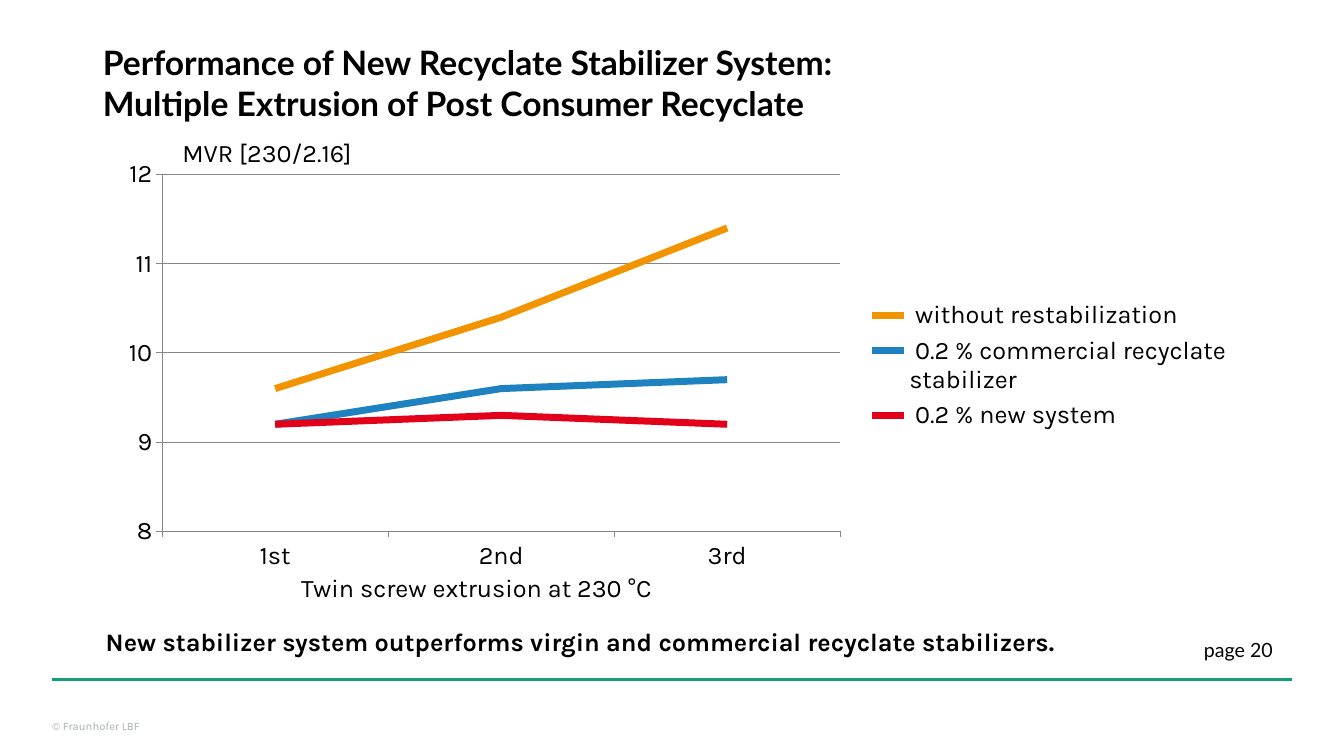
from dataclasses import dataclass

from lxml import etree
from pptx import Presentation
from pptx.chart.data import CategoryChartData
from pptx.dml.color import RGBColor
from pptx.enum.chart import XL_CHART_TYPE, XL_LEGEND_POSITION, XL_TICK_MARK
from pptx.enum.shapes import MSO_CONNECTOR
from pptx.enum.text import MSO_ANCHOR, MSO_AUTO_SIZE, PP_ALIGN
from pptx.oxml.ns import qn
from pptx.util import Inches, Pt

LINE_CHART = XL_CHART_TYPE.LINE
LEGEND_RIGHT = XL_LEGEND_POSITION.RIGHT
TICK_OUTSIDE, TICK_NONE = XL_TICK_MARK.OUTSIDE, XL_TICK_MARK.NONE
STRAIGHT = MSO_CONNECTOR.STRAIGHT
TOP, BOTTOM = MSO_ANCHOR.TOP, MSO_ANCHOR.BOTTOM
LEFT = PP_ALIGN.LEFT
NO_AUTOFIT = MSO_AUTO_SIZE.NONE

WIDTH, HEIGHT = Inches(13.33), Inches(7.5)
TITLE_ONLY = 5
COLOURS = {
    "text": "000000",
    "copyright": "A8AFAF",
    "rule": "179C7D",
    "grid": "868686",
    "orange": "F29400",
    "blue": "1F82C0",
    "red": "E2001A",
}


@dataclass(frozen=True)
class Area:
    """A rectangle in percent of the slide's width and height."""
    left: float
    top: float
    width: float
    height: float

    def lengths(self) -> tuple[int, int, int, int]:
        return (across(self.left), down(self.top),
                across(self.width), down(self.height))


@dataclass(frozen=True)
class Label:
    text: str
    area: Area
    size: float = 18
    font: str = "Karla"
    colour: str = "text"
    bold: bool = False
    inset: bool = True
    anchor: MSO_ANCHOR = TOP


@dataclass(frozen=True)
class Stabilizer:
    name: str
    colour: str
    melt_rates: tuple[float, ...]


TITLE = Label("Performance of New Recyclate Stabilizer System:\n"
              "Multiple Extrusion of Post Consumer Recyclate",
              Area(6.9, 4.93, 60.17, 12.13), size=24, font="Lato", bold=True)
LABELS = (
    Label("© Fraunhofer LBF", Area(3.9, 95.2, 14.8, 1.9),
          size=8, colour="copyright", inset=False),
    Label("page 20", Area(89.57, 84.27, 6.08, 3.2),
          size=14, font="Lato", inset=False, anchor=BOTTOM),
    Label("MVR [230/2.16]", Area(12.83, 17.47, 14.85, 5.33)),
    Label("Twin screw extrusion at 230 °C", Area(21.68, 75.07, 28.88, 5.33)),
    Label("New stabilizer system outperforms virgin and commercial "
          "recyclate stabilizers.", Area(7.13, 82.13, 82.22, 5.33), bold=True),
)
RULE = Area(3.9, 89.87, 92.2, 0)
CHART = Area(7.95, 20, 84.47, 56.67)
# Percent of the chart's own size
PLOT = Area(4.87, 5.44, 59.73, 83.33)
LEGEND = Area(67, 33.5, 32, 33)
EXTRUSIONS = ("1st", "2nd", "3rd")
STABILIZERS = (
    Stabilizer(" without restabilization", "orange", (9.6, 10.4, 11.4)),
    Stabilizer(" 0.2 % commercial recyclate stabilizer", "blue", (9.2, 9.6, 9.7)),
    Stabilizer(" 0.2 % new system", "red", (9.2, 9.3, 9.2)),
)


def across(percent: float) -> int:
    return round(WIDTH * percent / 100)


def down(percent: float) -> int:
    return round(HEIGHT * percent / 100)


def colour(name: str) -> RGBColor:
    return RGBColor.from_string(COLOURS[name])


def style_line(line, colour_name: str, points: float) -> None:
    line.color.rgb = colour(colour_name)
    line.width = Pt(points)


def style_font(font, *, size: float, name: str = "Karla",
               colour_name: str = "text", bold: bool = False) -> None:
    font.size, font.name, font.bold = Pt(size), name, bold
    font.color.rgb = colour(colour_name)


def write(box, text: str, *, size: float, font: str, colour_name: str,
          bold: bool, inset: bool, anchor: MSO_ANCHOR) -> None:
    frame = box.text_frame
    frame.word_wrap = True
    frame.auto_size = NO_AUTOFIT
    frame.vertical_anchor = anchor
    frame.margin_left = frame.margin_right = Inches(0.1 if inset else 0)
    frame.margin_top = frame.margin_bottom = Inches(0.05 if inset else 0)
    frame.text = text
    for para in frame.paragraphs:
        para.alignment = LEFT
        for span in para.runs:
            style_font(span.font, size=size, name=font,
                       colour_name=colour_name, bold=bold)


def write_label(box, label: Label) -> None:
    write(box, label.text, size=label.size, font=label.font,
          colour_name=label.colour, bold=label.bold,
          inset=label.inset, anchor=label.anchor)


def add_title(page) -> None:
    title = page.shapes.title
    title.left, title.top, title.width, title.height = TITLE.area.lengths()
    write_label(title, TITLE)


def add_rule(page) -> None:
    left, top, width, _ = RULE.lengths()
    rule = page.shapes.add_connector(STRAIGHT, left, top, left + width, top)
    style_line(rule.line, "rule", 2.5)
    etree.SubElement(rule._element.spPr, qn("a:effectLst"))


def place_in_chart(parent, area: Area, index: int, inner: bool = False) -> None:
    """Give a chart part a manual layout, as its child at the index."""
    for old in parent.findall(qn("c:layout")):
        parent.remove(old)
    layout = etree.Element(qn("c:layout"))
    manual = etree.SubElement(layout, qn("c:manualLayout"))
    settings = [("layoutTarget", "inner")] if inner else []
    settings += [("xMode", "edge"), ("yMode", "edge")]
    shares = zip("xywh", (area.left, area.top, area.width, area.height))
    settings += [(key, str(share / 100)) for key, share in shares]
    for key, value in settings:
        etree.SubElement(manual, qn(f"c:{key}")).set("val", value)
    parent.insert(index, layout)


def add_melt_rate_chart(page) -> None:
    data = CategoryChartData(number_format="0.0")
    data.categories = EXTRUSIONS
    for stabilizer in STABILIZERS:
        data.add_series(stabilizer.name, stabilizer.melt_rates)
    chart = page.shapes.add_chart(LINE_CHART, *CHART.lengths(), data).chart
    chart.has_title = False
    style_font(chart.font, size=18)

    plot = chart.plots[0]
    plot.vary_by_categories = False
    for series, stabilizer in zip(plot.series, STABILIZERS):
        series.smooth = False
        style_line(series.format.line, stabilizer.colour, 5)

    rates = chart.value_axis
    rates.minimum_scale, rates.maximum_scale, rates.major_unit = 8, 12, 1
    rates.tick_labels.number_format = "0"
    rates.tick_labels.number_format_is_linked = False
    rates.has_major_gridlines = True
    style_line(rates.major_gridlines.format.line, "grid", 0.75)
    for axis in (rates, chart.category_axis):
        axis.major_tick_mark, axis.minor_tick_mark = TICK_OUTSIDE, TICK_NONE
        style_line(axis.format.line, "grid", 0.75)

    chart.has_legend = True
    legend = chart.legend
    legend.position = LEGEND_RIGHT
    legend.include_in_layout = False
    style_font(legend.font, size=18)
    place_in_chart(legend._element, LEGEND, 1)
    place_in_chart(plot._element.getparent(), PLOT, 0, inner=True)


def main() -> None:
    deck = Presentation()
    deck.slide_width, deck.slide_height = WIDTH, HEIGHT
    page = deck.slides.add_slide(deck.slide_layouts[TITLE_ONLY])
    add_rule(page)
    add_title(page)
    add_melt_rate_chart(page)
    for label in LABELS:
        write_label(page.shapes.add_textbox(*label.area.lengths()), label)
    deck.save("out.pptx")


if __name__ == "__main__":
    main()
